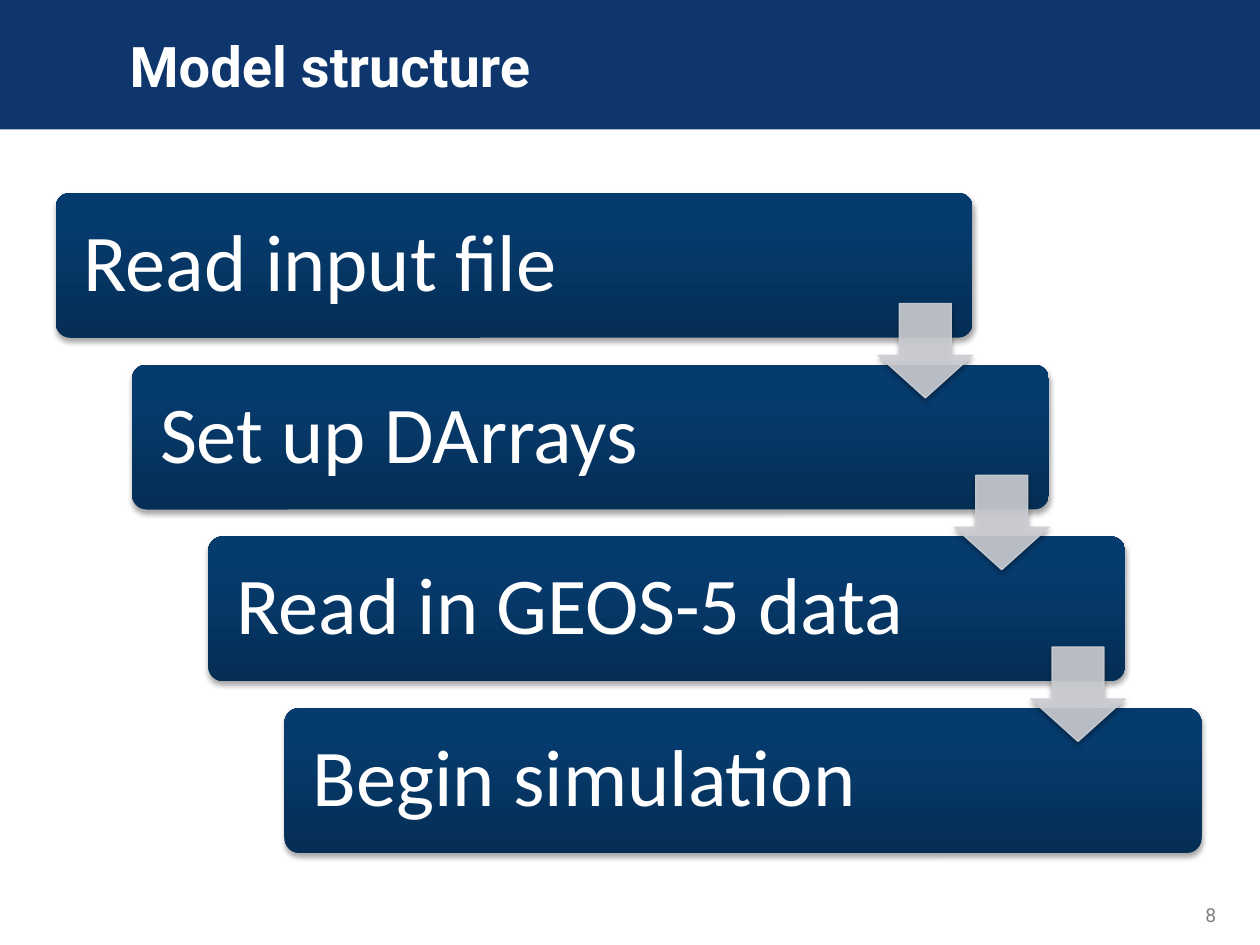
import lxml.etree
import pptx
import pptx.dml.color
import pptx.enum.shapes
import pptx.enum.text
import pptx.oxml
import pptx.oxml.ns
import pptx.util

Pt = pptx.util.Pt
SHAPE = pptx.enum.shapes.MSO_SHAPE
ANCHOR = pptx.enum.text.MSO_ANCHOR
qn = pptx.oxml.ns.qn
COLORS = {
    "banner": "0E366C", "white": "FFFFFF", "number": "808080", "arrow": "CCCED3",
    "dark": "052E55", "middle": "063B6E", "light": "053C70", "shadow": "000000",
}
STEPS = ["Read input file", "Set up DArrays", "Read in GEOS-5 data", "Begin simulation"]


def rgb(name):
    return pptx.dml.color.RGBColor.from_string(COLORS[name])


def write(tf, text, size, color="white", font="Roboto", bold=False,
          anchor=ANCHOR.TOP, margin=None, spacing=None):
    tf.word_wrap = True
    tf.vertical_anchor = anchor
    if margin is not None:
        tf.margin_left = tf.margin_right = tf.margin_top = tf.margin_bottom = Pt(margin)
    p = tf.paragraphs[0]
    p.alignment = pptx.enum.text.PP_ALIGN.LEFT
    p.line_spacing = spacing
    r = p.add_run()
    r.text = text
    r.font.name, r.font.size, r.font.bold = font, Pt(size), bold
    r.font.color.rgb = rgb(color)


class Deck:
    """Holds the style and the current slide."""

    def __init__(self):
        self.prs = pptx.Presentation()
        self.prs.slide_width, self.prs.slide_height = Pt(720), Pt(540)
        self.s = self.prs.slides.add_slide(self.prs.slide_layouts[6])

    def shape(self, kind, box, color):
        sp = self.s.shapes.add_shape(kind, *map(Pt, box))
        sp.shadow.inherit = False
        sp.fill.solid()
        sp.fill.fore_color.rgb = rgb(color)
        sp.line.fill.background()
        return sp

    def text(self, box, text, **style):
        sp = self.s.shapes.add_textbox(*map(Pt, box))
        write(sp.text_frame, text, **style)

    def cast_shadow(self, sp):
        effects = sp._element.spPr.find(qn("a:effectLst"))
        shadow = lxml.etree.SubElement(
            effects, qn("a:outerShdw"), blurRad=str(Pt(3.1)), dist=str(Pt(1.8)),
            dir="5400000", rotWithShape="0")
        color = lxml.etree.SubElement(shadow, qn("a:srgbClr"), val=COLORS["shadow"])
        lxml.etree.SubElement(color, qn("a:alpha"), val="35000")

    def step(self, box, text):
        sp = self.shape(SHAPE.ROUNDED_RECTANGLE, box, "dark")
        sp.adjustments[0] = 0.1
        sp.fill.gradient()
        sp.fill.gradient_angle = 90
        stops = sp._element.spPr.find(qn("a:gradFill")).find(qn("a:gsLst"))
        for stop in list(stops):
            stops.remove(stop)
        for name, percent in (("dark", 0), ("middle", 80), ("light", 100)):
            stop = lxml.etree.SubElement(stops, qn("a:gs"), pos=str(percent * 1000))
            lxml.etree.SubElement(stop, qn("a:srgbClr"), val=COLORS[name])
        self.cast_shadow(sp)
        write(sp.text_frame, text, size=46, font="Calibri",
              anchor=ANCHOR.MIDDLE, margin=13.7, spacing=0.9)

    def arrow(self, box):
        sp = self.shape(SHAPE.DOWN_ARROW, box, "arrow")
        sp.adjustments[0], sp.adjustments[1] = 0.55, 0.45
        sp.line.color.rgb = rgb("arrow")
        sp.line.width = Pt(0.75)
        for color in list(sp._element.spPr.iter(qn("a:srgbClr"))):
            lxml.etree.SubElement(color, qn("a:alpha"), val="90000")
        self.cast_shadow(sp)


def main():
    deck = Deck()
    deck.shape(SHAPE.RECTANGLE, (0, 0, 720, 74), "banner")
    deck.text((681.8, 512.6, 33, 21), "8", size=11, color="number")
    deck.text((67, 13, 638, 46.8), "Model structure", size=32, bold=True,
              anchor=ANCHOR.BOTTOM)

    left, top, width, height = 31.8, 110.2, 524, 82.8
    dx, dy, arrow = 43.6, 98.15, 54
    for i, text in enumerate(STEPS):
        deck.step((left + i * dx, top + i * dy, width, height), text)
    for i in range(len(STEPS) - 1):
        deck.arrow((left + i * dx + width - arrow, top + i * dy + 63.2, arrow, arrow))
    deck.prs.save("out.pptx")


if __name__ == "__main__":
    main()
